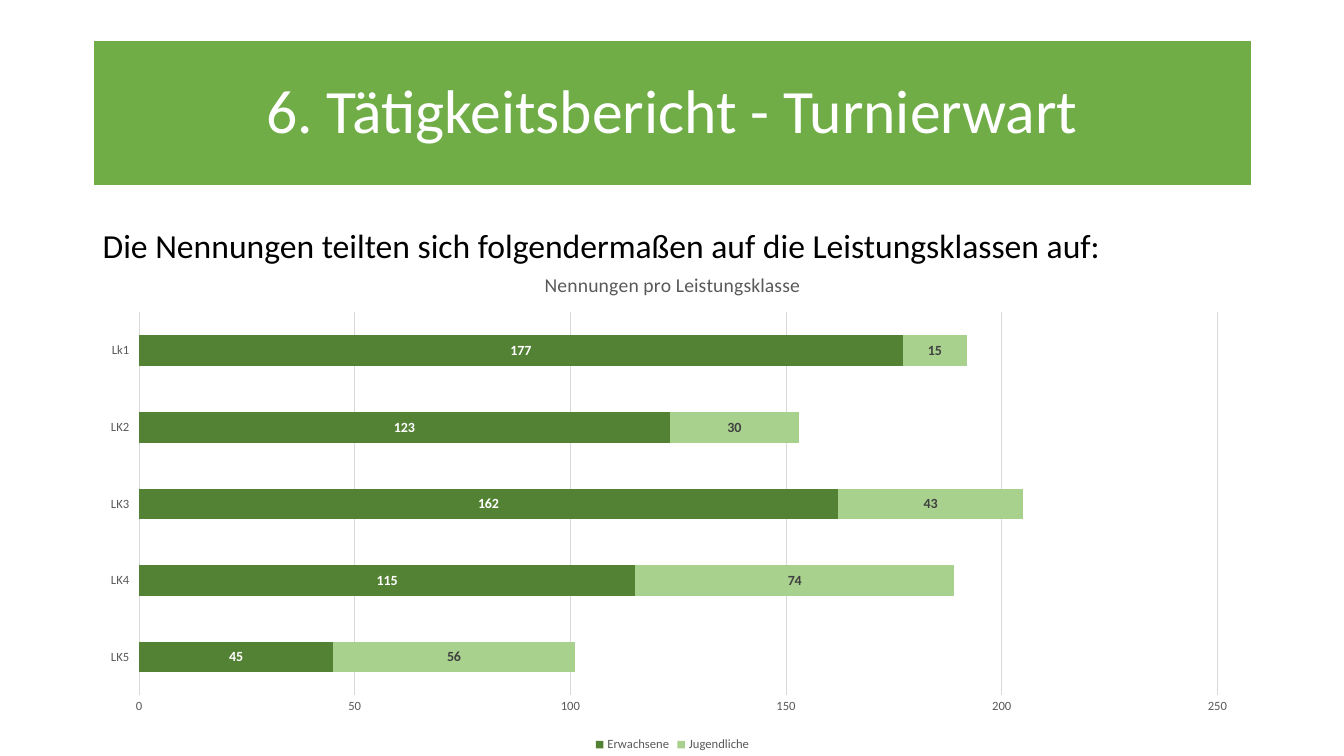
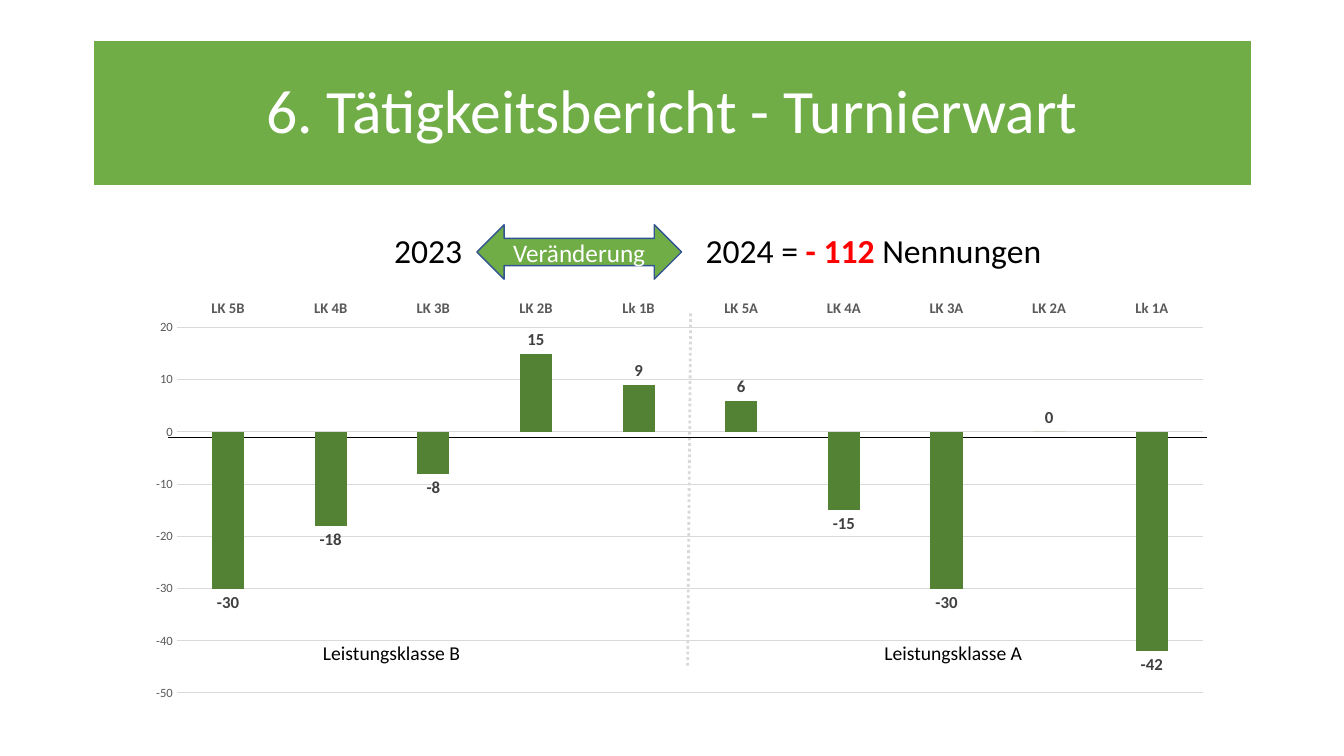
from lxml.etree import SubElement
from pptx import Presentation
from pptx.chart.data import CategoryChartData
from pptx.dml.color import RGBColor
from pptx.enum.chart import XL_CHART_TYPE, XL_LABEL_POSITION, XL_LEGEND_POSITION, XL_TICK_LABEL_POSITION, XL_TICK_MARK
from pptx.enum.dml import MSO_LINE
from pptx.enum.shapes import MSO_CONNECTOR, MSO_SHAPE
from pptx.enum.text import MSO_ANCHOR, PP_ALIGN
from pptx.oxml import parse_xml
from pptx.oxml.ns import nsdecls, qn
from pptx.util import Pt

FONT = "Calibri"
GREEN, DARK, LIGHT = "70AD47", "548235", "A9D18E"
WHITE, BLACK, RED, BLUE = "FFFFFF", "000000", "FF0000", "325491"
GRAY, INK, GRID = "595959", "404040", "D9D9D9"
paint = RGBColor.from_string


def px(*nums):
    return [num * 9144 for num in nums]


def style(font, size, color, bold=False):
    font.name = FONT
    font.size = Pt(size)
    font.bold = bold
    font.color.rgb = paint(color)


deck = Presentation()
deck.slide_width, deck.slide_height = px(1333, 750)
first, second = [deck.slides.add_slide(deck.slide_layouts[5]) for _ in range(2)]

for slide in (first, second):
    title = slide.shapes.title
    title.left, title.top, title.width, title.height = px(92, 40, 1150, 145)
    title.fill.solid()
    title.fill.fore_color.rgb = paint(GREEN)
    title.line.color.rgb = paint(WHITE)
    title.line.width = Pt(1.5)
    title.text_frame.text = "6. Tätigkeitsbericht - Turnierwart"
    title.text_frame.vertical_anchor = MSO_ANCHOR.MIDDLE
    para = title.text_frame.paragraphs[0]
    para.alignment = PP_ALIGN.CENTER
    para.line_spacing = 0.9
    style(para.runs[0].font, 44, WHITE)

labels = [
    (first, (92, 218, 1150, 50), 24, PP_ALIGN.LEFT,
     [("Die Nennungen teilten sich folgendermaßen auf die Leistungsklassen auf:", BLACK)]),
    (second, (381, 223, 90, 50), 24, PP_ALIGN.LEFT, [("2023", BLACK)]),
    (second, (690, 223, 425, 50), 24, PP_ALIGN.LEFT,
     [("2024 = ", BLACK), ("- 112", RED), (" Nennungen", BLACK)]),
    (second, (307, 631, 163, 32), 14, PP_ALIGN.CENTER, [("Leistungsklasse B", BLACK)]),
    (second, (866, 631, 159, 32), 14, PP_ALIGN.CENTER, [("Leistungsklasse A", BLACK)]),
]
for slide, place, size, align, parts in labels:
    frame = slide.shapes.add_textbox(*px(*place)).text_frame
    frame.word_wrap = True
    frame.vertical_anchor = MSO_ANCHOR.MIDDLE
    para = frame.paragraphs[0]
    para.alignment = align
    for words, color in parts:
        run = para.add_run()
        run.text = words
        style(run.font, size, color, color == RED)

lines = [
    ((685, 311, 682, 663), GRID, 2, MSO_LINE.ROUND_DOT),
    ((167, 434, 1197, 434), BLACK, 1.25, MSO_LINE.SOLID),
]
for ends, color, width, dash in lines:
    line = second.shapes.add_connector(MSO_CONNECTOR.STRAIGHT, *px(*ends))
    line.line.color.rgb = paint(color)
    line.line.width = Pt(width)
    line.line.dash_style = dash
    SubElement(line.element.spPr, qn("a:effectLst"))

arrow = second.shapes.add_shape(MSO_SHAPE.LEFT_RIGHT_ARROW, *px(473, 223, 203, 54))
arrow.shadow.inherit = False
arrow.fill.solid()
arrow.fill.fore_color.rgb = paint(GREEN)
arrow.line.color.rgb = paint(BLUE)
arrow.line.width = Pt(1)
arrow.text_frame.text = "Veränderung"
arrow.text_frame.word_wrap = False
arrow.text_frame.vertical_anchor = MSO_ANCHOR.MIDDLE
para = arrow.text_frame.paragraphs[0]
para.alignment = PP_ALIGN.CENTER
style(para.runs[0].font, 18, WHITE)

plans = [
    dict(slide=first, kind=XL_CHART_TYPE.BAR_STACKED, place=(92, 250, 1150, 500),
         area=(0.04, 0.12, 0.93, 0.76), cats=["LK5", "LK4", "LK3", "LK2", "Lk1"],
         rows=[("Erwachsene", [45, 115, 162, 123, 177], DARK, WHITE),
               ("Jugendliche", [56, 74, 43, 30, 15], LIGHT, INK)],
         gap=150, lap=100, range=(0, 250, 50), cat=(9, False), size=10,
         spot=XL_LABEL_POSITION.CENTER, ticks=XL_TICK_LABEL_POSITION.LOW,
         title="Nennungen pro Leistungsklasse"),
    dict(slide=second, kind=XL_CHART_TYPE.COLUMN_CLUSTERED, place=(132, 288, 1083, 412),
         area=(0.04, 0.09, 0.94, 0.88),
         cats=["LK 5B", "LK 4B", "LK 3B", "LK 2B", "Lk 1B",
               "LK 5A", "LK 4A", "LK 3A", "LK 2A", "Lk 1A"],
         rows=[("Series 1", [-30, -18, -8, 15, 9, 6, -15, -30, 0, -42], DARK, INK)],
         gap=219, lap=-27, range=(-50, 20, 10), cat=(10.5, True), size=12,
         spot=XL_LABEL_POSITION.OUTSIDE_END, ticks=XL_TICK_LABEL_POSITION.HIGH,
         title=None),
]
for plan in plans:
    data = CategoryChartData()
    data.categories = plan["cats"]
    for name, vals, _, _ in plan["rows"]:
        data.add_series(name, vals)
    chart = plan["slide"].shapes.add_chart(plan["kind"], *px(*plan["place"]), data).chart
    style(chart.font, 10, BLACK)

    chart.has_title = bool(plan["title"])
    if plan["title"]:
        chart.chart_title.text_frame.text = plan["title"]
        style(chart.chart_title.text_frame.paragraphs[0].runs[0].font, 14, GRAY)
        chart.chart_title.include_in_layout = False
    chart.has_legend = len(plan["rows"]) > 1
    if chart.has_legend:
        chart.legend.position = XL_LEGEND_POSITION.BOTTOM
        chart.legend.include_in_layout = False
        style(chart.legend.font, 9, GRAY)

    for axis in (chart.category_axis, chart.value_axis):
        axis.major_tick_mark = axis.minor_tick_mark = XL_TICK_MARK.NONE
    axis = chart.category_axis
    axis.has_major_gridlines = False
    axis.tick_label_position = plan["ticks"]
    axis.format.line.color.rgb = paint(GRID)
    axis.format.line.width = Pt(0.75)
    size, bold = plan["cat"]
    style(axis.tick_labels.font, size, GRAY, bold)
    axis = chart.value_axis
    axis.minimum_scale, axis.maximum_scale, axis.major_unit = plan["range"]
    axis.format.line.fill.background()
    axis.major_gridlines.format.line.color.rgb = paint(GRID)
    axis.major_gridlines.format.line.width = Pt(0.75)
    style(axis.tick_labels.font, 9, GRAY)

    plot = chart.plots[0]
    plot.vary_by_categories = False
    plot.gap_width = plan["gap"]
    plot.overlap = plan["lap"]
    for row, (_, _, color, ink) in zip(plot.series, plan["rows"]):
        row.invert_if_negative = False
        row.format.fill.solid()
        row.format.fill.fore_color.rgb = paint(color)
        tags = row.data_labels
        tags.show_value = True
        tags.position = plan["spot"]
        style(tags.font, plan["size"], ink, True)

    clear = (f'<c:spPr {nsdecls("c", "a")}><a:noFill/>'
             '<a:ln><a:noFill/></a:ln></c:spPr>')
    body = chart.element.find(qn("c:chart"))
    body.addnext(parse_xml(clear))
    area = body.find(qn("c:plotArea"))
    area.append(parse_xml(clear))
    for old in area.findall(qn("c:layout")):
        area.remove(old)
    layout = parse_xml(f'<c:layout {nsdecls("c")}><c:manualLayout/></c:layout>')
    area.insert(0, layout)
    marks = [("layoutTarget", "inner"), ("xMode", "edge"), ("yMode", "edge")]
    for tag, val in marks + list(zip("xywh", plan["area"])):
        SubElement(layout[0], qn("c:" + tag)).set("val", str(val))

deck.save("out.pptx")
